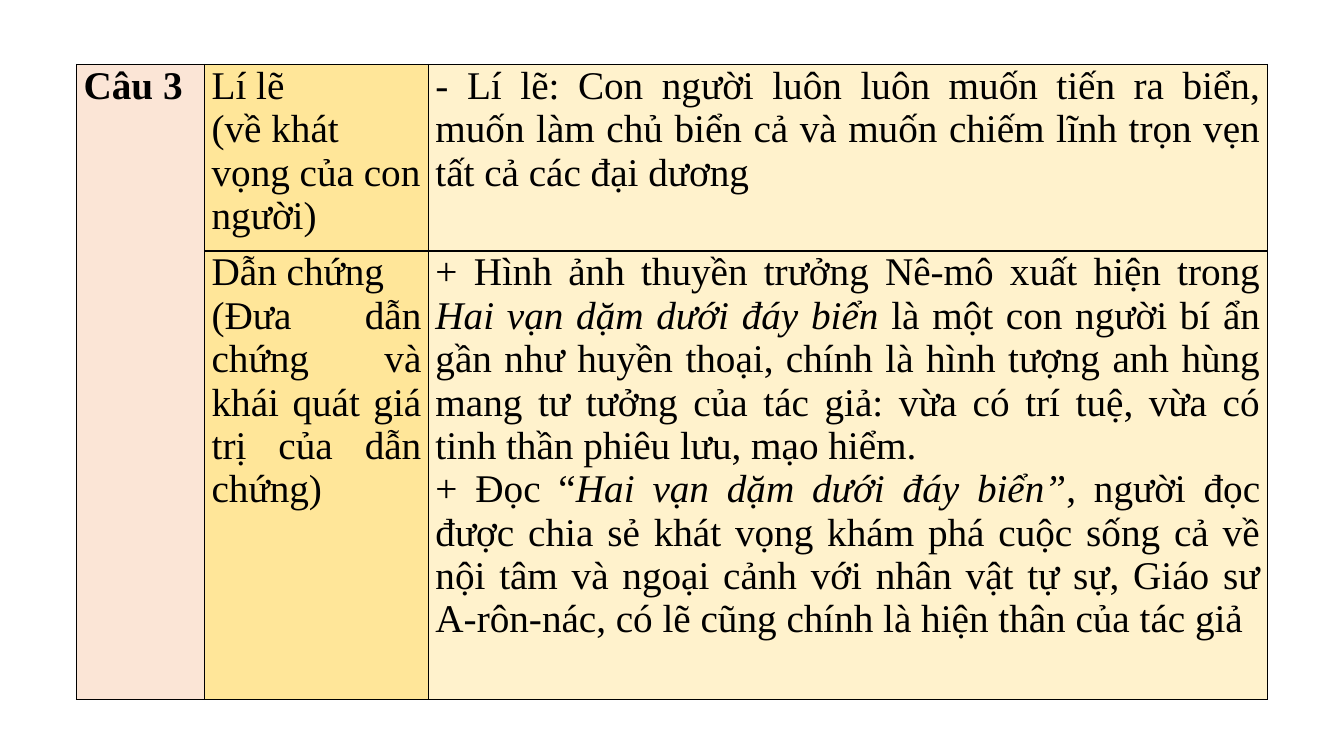
from dataclasses import dataclass

from lxml.etree import SubElement
from pptx import Presentation
from pptx.dml.color import RGBColor
from pptx.enum.text import PP_ALIGN as Align
from pptx.oxml.ns import qn
from pptx.table import Table, _Cell as Cell
from pptx.util import Inches, Pt

BLACK = RGBColor(0x00, 0x00, 0x00)
PINK = RGBColor(0xFB, 0xE5, 0xD6)
GOLD = RGBColor(0xFF, 0xE6, 0x99)
CREAM = RGBColor(0xFF, 0xF2, 0xCC)

COLUMN_WIDTHS = (1.27, 2.22, 8.32)
ROW_HEIGHTS = (1.85, 4.45)
COLUMN_FILLS = (PINK, GOLD, CREAM)
FONT_FORMAT = {"name": "Times New Roman", "size": Pt(28), "italic": False}
CELL_FORMAT = {
    "margin_left": Inches(0.07),
    "margin_right": Inches(0.07),
    "margin_top": 0,
    "margin_bottom": 0,
}


@dataclass(frozen=True)
class Span:
    text: str
    italic: bool = False


@dataclass(frozen=True)
class Entry:
    row: int
    column: int
    paragraphs: tuple[tuple[Span, ...], ...]
    align: Align = Align.JUSTIFY
    bold: bool = False


ENTRIES = (
    Entry(0, 0, ((Span("Câu 3"),),), Align.LEFT, bold=True),
    Entry(0, 1, (
        (Span("Lí lẽ"),),
        (Span("(về khát vọng của con người)"),),
    ), Align.LEFT),
    Entry(0, 2, (
        (Span("- Lí lẽ: Con người luôn luôn muốn tiến ra biển, muốn làm chủ "
              "biển cả và muốn chiếm lĩnh trọn vẹn tất cả các đại dương"),),
    )),
    Entry(1, 1, (
        (Span("Dẫn chứng"),),
        (Span("(Đưa dẫn chứng và khái quát giá trị của dẫn chứng)"),),
    )),
    Entry(1, 2, (
        (
            Span("+ Hình ảnh thuyền trưởng Nê-mô xuất hiện trong "),
            Span("Hai vạn dặm dưới đáy biển", italic=True),
            Span(" là một con người bí ẩn gần như huyền thoại, chính là hình "
                 "tượng anh hùng mang tư tưởng của tác giả: vừa có trí tuệ, "
                 "vừa có tinh thần phiêu lưu, mạo hiểm."),
        ),
        (
            Span("+ Đọc “"),
            Span("Hai vạn dặm dưới đáy biển”", italic=True),
            Span(", người đọc được chia sẻ khát vọng khám phá cuộc sống cả về "
                 "nội tâm và ngoại cảnh với nhân vật tự sự, Giáo sư A-rôn-nác, "
                 "có lẽ cũng chính là hiện thân của tác giả"),
        ),
    )),
)


def add_borders(cell: Cell) -> None:
    """Draw a thin black line on all four sides of a cell."""
    properties = cell._tc.get_or_add_tcPr()
    for position, side in enumerate(("lnL", "lnR", "lnT", "lnB")):
        line = SubElement(properties, qn(f"a:{side}"), w=str(Pt(1)))
        fill = SubElement(line, qn("a:solidFill"))
        SubElement(fill, qn("a:srgbClr"), val=str(BLACK))
        properties.insert(position, line)  # borders come before the fill


def style_cell(cell: Cell, color: RGBColor) -> None:
    for name, value in CELL_FORMAT.items():
        setattr(cell, name, value)
    cell.fill.solid()
    cell.fill.fore_color.rgb = color
    add_borders(cell)


def write_entry(table: Table, entry: Entry) -> None:
    frame = table.cell(entry.row, entry.column).text_frame
    for index, spans in enumerate(entry.paragraphs):
        para = frame.add_paragraph() if index else frame.paragraphs[0]
        para.alignment = entry.align
        for span in spans:
            run = para.add_run()
            run.text = span.text
            font_format = FONT_FORMAT | {"bold": entry.bold, "italic": span.italic}
            for name, value in font_format.items():
                setattr(run.font, name, value)
            run.font.color.rgb = BLACK


def main() -> None:
    deck = Presentation()
    deck.slide_width, deck.slide_height = Inches(13.33), Inches(7.5)
    page = deck.slides.add_slide(deck.slide_layouts[6])

    # Table grid
    box = page.shapes.add_table(
        len(ROW_HEIGHTS), len(COLUMN_WIDTHS), Inches(0.76), Inches(0.64),
        Inches(sum(COLUMN_WIDTHS)), Inches(sum(ROW_HEIGHTS)),
    )
    table = box.table
    table.first_row = table.horz_banding = False
    for column, width in zip(table.columns, COLUMN_WIDTHS):
        column.width = Inches(width)
    for row, height in zip(table.rows, ROW_HEIGHTS):
        row.height = Inches(height)
        for cell, color in zip(row.cells, COLUMN_FILLS):
            style_cell(cell, color)
    table.cell(0, 0).merge(table.cell(1, 0))

    # Table text
    for entry in ENTRIES:
        write_entry(table, entry)

    deck.save("out.pptx")


if __name__ == "__main__":
    main()
